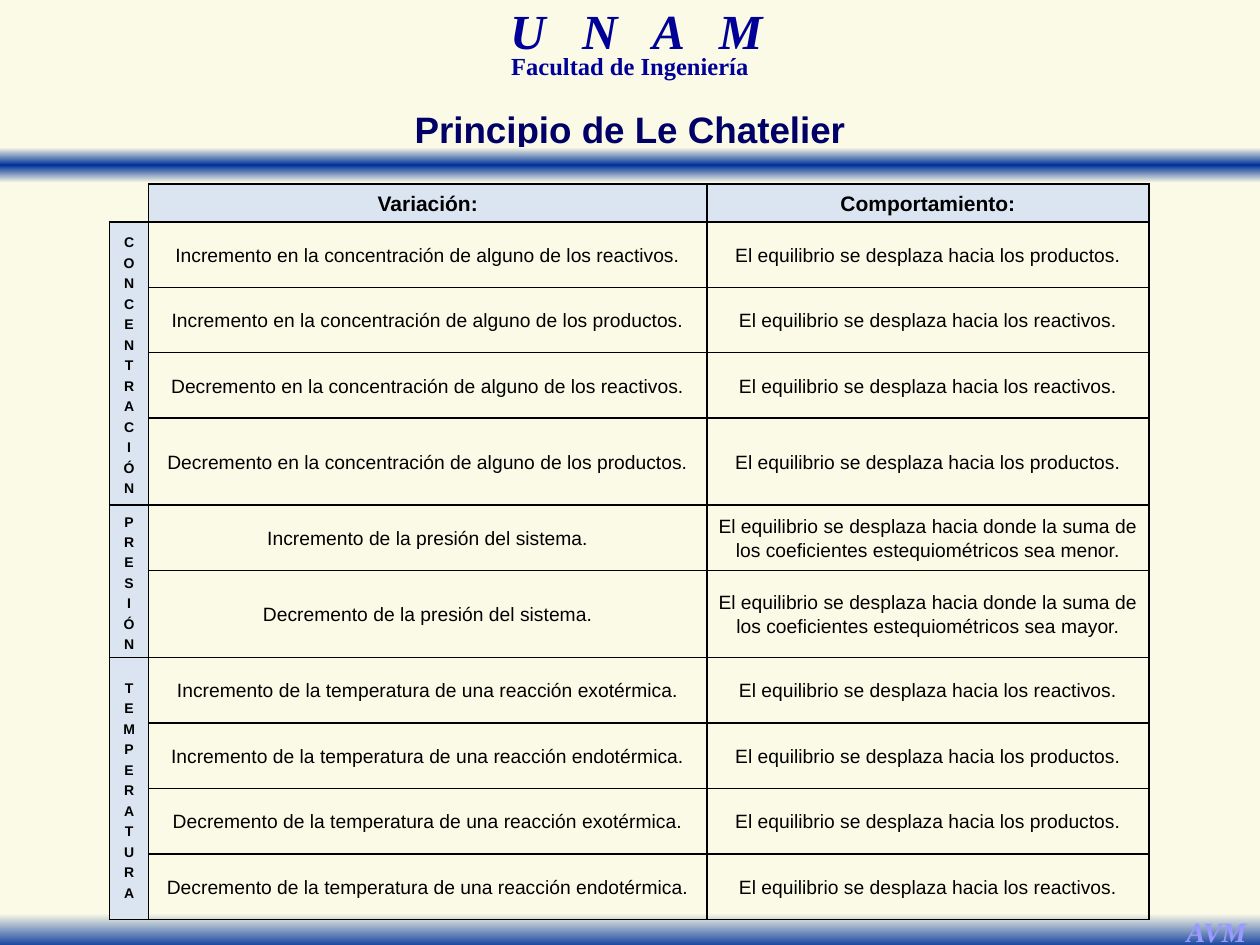
from pptx import Presentation
from pptx.dml.color import RGBColor as RGB
from pptx.enum.shapes import MSO_SHAPE as SHAPE
from pptx.enum.text import MSO_ANCHOR as ANCHOR, PP_ALIGN as ALIGN
from pptx.oxml import parse_xml
from pptx.oxml.ns import nsdecls
from pptx.util import Inches, Pt

COLORS = {
    "cream": "FAFAE6", "blue": "003399", "navy": "000066", "crest": "000099",
    "lilac": "9999FF", "head": "DBE5F1", "black": "000000",
}


def style(par, font, size, color, bold=False, italic=False, space=0):
    par.alignment = ALIGN.CENTER
    for run in par.runs:
        run.font.name = font
        run.font.size = Pt(size)
        run.font.bold = bold
        run.font.italic = italic
        run.font.color.rgb = RGB.from_string(COLORS[color])
        if space:
            run._r.get_or_add_rPr().set("spc", str(space * 100))


def edge(cell, side, shown):
    paint = f'<a:solidFill><a:srgbClr val="{COLORS["black"]}"/></a:solidFill>'
    line = parse_xml(
        f'<a:ln{side} {nsdecls("a")} w="12700">'
        f'{paint if shown else "<a:noFill/>"}</a:ln{side}>'
    )
    cell._tc.get_or_add_tcPr().append(line)


prs = Presentation()
prs.slide_width, prs.slide_height = Inches(10), Inches(7.5)
slide = prs.slides.add_slide(prs.slide_layouts[5])
slide.background.fill.solid()
slide.background.fill.fore_color.rgb = RGB.from_string(COLORS["cream"])

bands = [
    (1.17, [(0, "cream"), (50, "blue"), (100, "cream")]),
    (7.25, [(0, "cream"), (100, "blue")]),
]
for top, stops in bands:
    band = slide.shapes.add_shape(SHAPE.RECTANGLE, 0, Inches(top), Inches(10), Inches(0.28))
    band.shadow.inherit = False
    band.line.fill.background()
    band.fill.gradient()
    band.fill.gradient_angle = 270
    marks = band._element.spPr.find(".//{*}gsLst")
    for mark in list(marks):
        marks.remove(mark)
    for place, color in stops:
        marks.append(parse_xml(
            f'<a:gs {nsdecls("a")} pos="{place * 1000}">'
            f'<a:srgbClr val="{COLORS[color]}"/></a:gs>'
        ))

labels = [
    ("U N A M", 3.09, 0.08, 3.92, 0.43, 28, "crest", True, 0.7, 7),
    ("Facultad de Ingeniería", 3.21, 0.42, 3.58, 0.26, 14, "crest", False, 0.7, 0),
    ("AVM", 9.31, 7.21, 0.69, 0.37, 16, "lilac", True, 1, 0),
]
for text, left, top, width, height, size, color, italic, lead, space in labels:
    box = slide.shapes.add_textbox(Inches(left), Inches(top), Inches(width), Inches(height))
    box.text_frame.word_wrap = text != "AVM"
    box.text_frame.text = text
    par = box.text_frame.paragraphs[0]
    par.line_spacing = lead
    style(par, "Times New Roman", size, color, True, italic, space)

title = slide.shapes.title
title.left, title.top = Inches(3.17), Inches(0.8)
title.width, title.height = Inches(3.66), Inches(0.45)
title.text_frame.text = "Principio de Le Chatelier"
title.text_frame.word_wrap = False
title.text_frame.vertical_anchor = ANCHOR.MIDDLE
style(title.text_frame.paragraphs[0], "Arial", 21, "navy", True)

conc = "en la concentración de alguno de los"
temp = "de la temperatura de una reacción"
move = "El equilibrio se desplaza hacia"
right, back = f"{move} los productos.", f"{move} los reactivos."
sums = f"{move} donde la suma de los coeficientes estequiométricos sea"
rows = [
    ("Variación:", "Comportamiento:"),
    (f"Incremento {conc} reactivos.", right),
    (f"Incremento {conc} productos.", back),
    (f"Decremento {conc} reactivos.", back),
    (f"Decremento {conc} productos.", right),
    ("Incremento de la presión del sistema.", f"{sums} menor."),
    ("Decremento de la presión del sistema.", f"{sums} mayor."),
    (f"Incremento {temp} exotérmica.", back),
    (f"Incremento {temp} endotérmica.", right),
    (f"Decremento {temp} exotérmica.", right),
    (f"Decremento {temp} endotérmica.", back),
]
groups = {1: ("CONCENTRACIÓN", 4), 5: ("PRESIÓN", 2), 7: ("TEMPERATURA", 4)}
widths = [0.31, 4.43, 3.51]
heights = [0.26] + [0.52] * 10
heights[4], heights[6] = 0.68, 0.69

frame = slide.shapes.add_table(
    len(rows), len(widths), Inches(0.87), Inches(1.46), Inches(sum(widths)), Inches(sum(heights))
)
table = frame.table
table.first_row = table.horz_banding = False
for col, width in zip(table.columns, widths):
    col.width = Inches(width)
for row, height in zip(table.rows, heights):
    row.height = Inches(height)

for r, texts in enumerate(rows):
    word = groups[r][0] if r in groups else ""
    for c, text in enumerate(("\n".join(word),) + texts):
        cell = table.cell(r, c)
        cell.vertical_anchor = ANCHOR.MIDDLE
        cell.margin_left = cell.margin_right = Inches(0.04)
        cell.margin_top = cell.margin_bottom = 0
        for side in "LRTB":
            edge(cell, side, r > 0 or c > 0 or side in "RB")
        if (r == 0) != (c == 0):
            cell.fill.solid()
            cell.fill.fore_color.rgb = RGB.from_string(COLORS["head"])
        else:
            cell.fill.background()
        if not text:
            continue
        cell.text_frame.text = text
        size = 8 if c == 0 else 12 if r == 0 else 11
        for par in cell.text_frame.paragraphs:
            par.line_spacing = 1.3 if c == 0 else 1.1
            style(par, "Arial", size, "black", r == 0 or c == 0)

for r, (word, span) in groups.items():
    table.cell(r, 0).merge(table.cell(r + span - 1, 0))

prs.save("out.pptx")
